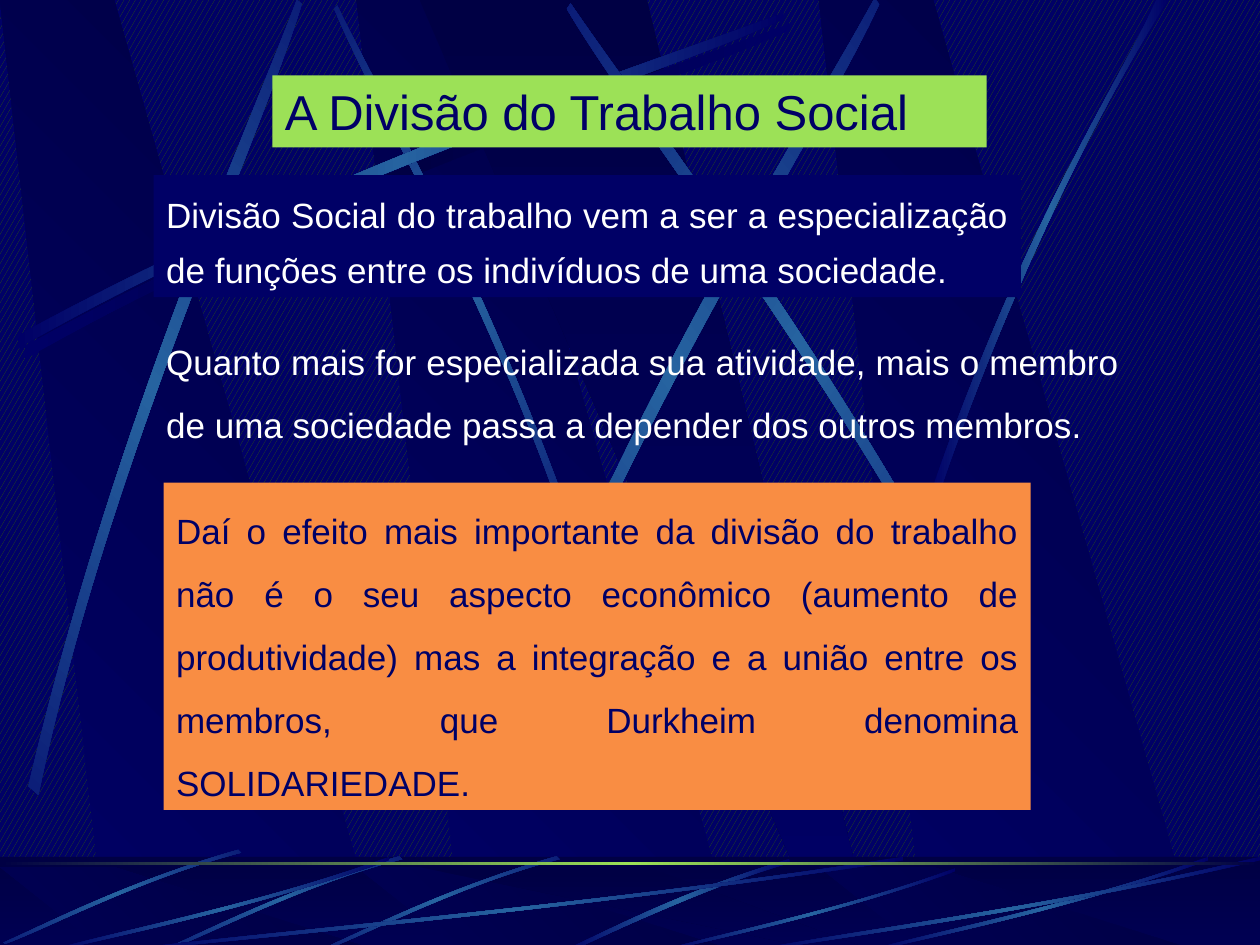
from dataclasses import dataclass

import pptx
import pptx.dml.color
import pptx.enum.dml
import pptx.enum.shapes
import pptx.enum.text
import pptx.oxml
import pptx.oxml.ns
import pptx.util
from pptx.util import Cm

NAVY, NIGHT, BEAM, LIME, ORANGE, WHITE = "000066", "000044", "2663A0", "9CE157", "F98D43", "FFFFFF"
ALIGN = pptx.enum.text.PP_ALIGN
GLOW = (NAVY, BEAM, NAVY)
SHADE = (NAVY, NIGHT, NAVY)

# Outlines as fractions of their box; a ribbon is two cubic curves of four points
STREAK = ((0, .96), (.43, .43), (.83, .15), (1, 0), (1, .02), (.84, .19), (.38, .5), (0, 1))
CLIPPED_STREAK = ((0, .99), (.4, .44), (.79, .17), (.95, 0), (1, 0), (.52, .36), (.16, .81), (.03, 1))
SHORT_STREAK = ((.99, 0), (.49, .37), (.16, .82), (0, .99), (.03, 1), (.23, .77), (.68, .25), (1, .04))
LEANING_BAND = ((.28, 1), (1, 1), (.3, 0), (0, 0))
WEDGE = ((0, 0), (.9, 1), (1, 1), (.5, 0))


@dataclass
class Box:
    """Place in centimetres."""
    left: float
    top: float
    width: float
    height: float

    def emu(self) -> list[int]:
        return [Cm(v) for v in (self.left, self.top, self.width, self.height)]


@dataclass
class Ribbon:
    box: Box
    turn: float = 0
    flip_x: bool = False
    flip_y: bool = False
    colors: tuple = GLOW
    outline: tuple = STREAK


@dataclass
class Panel:
    box: Box
    text: str
    fill: str | None
    color: str
    spacing: float


UPPER_RIBBONS = [
    Ribbon(Box(.51, .46, 15.44, 6.78), colors=SHADE),
    Ribbon(Box(3.58, 3.43, 11.23, 4.45), 45, flip_x=True),
    Ribbon(Box(.36, .25, 15.44, 6.78)),
    Ribbon(Box(-4.34, 4.62, 15.44, 6.78), 311.7),
    Ribbon(Box(5.87, 4.06, 15.85, 7.65), 321.6),
    Ribbon(Box(8.2, 3.86, 15.44, 6.78), 34.7, flip_x=True),
    Ribbon(Box(18.75, 0, 4.8, 10.08), outline=CLIPPED_STREAK),
]
FOOTER_RIBBONS = [Ribbon(Box(11.38, 17.32, 4.57, 1.85), outline=SHORT_STREAK)]
FOOTER_RIBBONS += [Ribbon(Box(left, top, 4.67, 2.11), 315, flip_x=True)
                   for left, top in ((6.55, 17.17), (3.38, 17.17), (.13, 17.04))]
FOOTER_RIBBONS += [Ribbon(Box(left, top, width, 19.18 - top), flip_x=True, flip_y=True)
                   for left, top, width in ((2.54, 17.27, 15.67), (1.07, 17.27, 6.78),
                                            (13.39, 17.5, 5.87), (17.58, 17.27, 6.78),
                                            (15.24, 17.27, 10.16))]

PANELS = [
    Panel(Box(3.3, 9.73, 17.48, 6.6),
          "Daí o efeito mais importante da divisão do trabalho não é o seu aspecto econômico "
          "(aumento de produtividade) mas a integração e a união entre os membros, que "
          "Durkheim denomina SOLIDARIEDADE.", ORANGE, NAVY, 1.5),
    Panel(Box(3.1, 6.32, 19.71, 2.79),
          "Quanto mais for especializada sua atividade, mais o membro de uma sociedade passa a "
          "depender dos outros membros.", None, WHITE, 1.5),
    Panel(Box(3.1, 3.53, 17.48, 2.46),
          "Divisão Social do trabalho vem a ser a especialização de funções entre os indivíduos "
          "de uma sociedade.", NAVY, WHITE, 1.3),
]


def rgb(color: str) -> pptx.dml.color.RGBColor:
    return pptx.dml.color.RGBColor.from_string(color)


def paint_solid(shape, color: str) -> None:
    shape.fill.solid()
    shape.fill.fore_color.rgb = rgb(color)


def paint_gradient(shape, colors: tuple, angle: int) -> None:
    """Spread the colours evenly, with the angle clockwise in degrees."""
    shape.fill.gradient()
    gradient = shape._element.spPr.find(pptx.oxml.ns.qn("a:gradFill"))
    stops = gradient.find(pptx.oxml.ns.qn("a:gsLst"))
    for stop in list(stops):
        stops.remove(stop)
    for i, color in enumerate(colors):
        stops.append(pptx.oxml.parse_xml(
            f'<a:gs {pptx.oxml.ns.nsdecls("a")} pos="{100000 * i // (len(colors) - 1)}">'
            f'<a:srgbClr val="{color}"/></a:gs>'))
    direction = gradient.find(pptx.oxml.ns.qn("a:lin"))
    direction.set("ang", str(angle * 60000))
    direction.set("scaled", "0")


def strip(shape):
    shape.line.fill.background()
    shape.shadow.inherit = False
    return shape


def add_rect(slide, box: Box):
    return strip(slide.shapes.add_shape(pptx.enum.shapes.MSO_SHAPE.RECTANGLE, *box.emu()))


def add_outline(slide, box: Box, points: list):
    left, top, width, height = box.emu()
    spots = [(round(left + x * width), round(top + y * height)) for x, y in points]
    builder = slide.shapes.build_freeform(*spots[0])
    builder.add_line_segments(spots[1:], close=True)
    return strip(builder.convert_to_shape())


def bend(segments: list) -> None:
    """Turn three line segments into one cubic curve."""
    bezier = pptx.oxml.parse_xml(f'<a:cubicBezTo {pptx.oxml.ns.nsdecls("a")}/>')
    segments[0].addprevious(bezier)
    for segment in segments:
        bezier.append(segment[0])
        segment.getparent().remove(segment)


def add_ribbon(slide, ribbon: Ribbon) -> None:
    points = [(1 - x if ribbon.flip_x else x, 1 - y if ribbon.flip_y else y)
              for x, y in ribbon.outline]
    shape = add_outline(slide, ribbon.box, points)
    segments = shape._element.spPr.findall(".//" + pptx.oxml.ns.qn("a:lnTo"))
    bend(segments[:3])
    bend(segments[4:7])
    shape.rotation = ribbon.turn
    paint_gradient(shape, ribbon.colors, 0)


def add_bands(slide, top: float, height: float) -> None:
    for left in (7.19, 0, 16.51):
        paint_gradient(add_outline(slide, Box(left, top, 7.67, height), LEANING_BAND),
                       (NAVY, NIGHT), 315)
    paint_gradient(add_outline(slide, Box(8.46, top, 9.17, height), WEDGE), (NIGHT, NAVY), 90)


def write(shape, text: str, size: int, color: str, align, spacing: float = 1) -> None:
    frame = shape.text_frame
    frame_format = {"word_wrap": True, "auto_size": pptx.enum.text.MSO_AUTO_SIZE.NONE,
                    "vertical_anchor": pptx.enum.text.MSO_ANCHOR.TOP}
    for name, value in frame_format.items():
        setattr(frame, name, value)
    frame.text = text
    paragraph = frame.paragraphs[0]
    for name, value in {"alignment": align, "line_spacing": spacing}.items():
        setattr(paragraph, name, value)
    font = paragraph.runs[0].font
    for name, value in {"name": "Arial", "size": pptx.util.Pt(size)}.items():
        setattr(font, name, value)
    font.color.rgb = rgb(color)


def add_decoration(slide) -> None:
    add_bands(slide, 0, 19.1)
    for ribbon in UPPER_RIBBONS:
        add_ribbon(slide, ribbon)

    footer = Box(0, 17.27, 25.4, 1.91)
    paint_gradient(add_rect(slide, footer), (NIGHT, NAVY), 90)
    add_bands(slide, 17.48, 1.7)
    veil = add_rect(slide, footer)
    paint_solid(veil, NIGHT)
    tint = veil._element.spPr.find(".//" + pptx.oxml.ns.qn("a:srgbClr"))
    tint.append(pptx.oxml.parse_xml(f'<a:alpha {pptx.oxml.ns.nsdecls("a")} val="50000"/>'))
    for ribbon in FOOTER_RIBBONS:
        add_ribbon(slide, ribbon)
    paint_gradient(add_rect(slide, Box(0, 17.37, 25.4, .06)), (NIGHT, LIME, NIGHT), 0)


def dress_master(slide) -> None:
    """Give the master its background and move the decoration behind its placeholders."""
    master = slide.slide_layout.slide_master
    fill = master.background.fill
    fill.patterned()
    fill.pattern = pptx.enum.dml.MSO_PATTERN.LARGE_CONFETTI
    fill.fore_color.rgb = rgb("2D5513")
    fill.back_color.rgb = rgb(NAVY)

    add_decoration(slide)
    first_placeholder = master.placeholders[0]._element
    for shape in list(slide.shapes):
        if not shape.is_placeholder:
            first_placeholder.addprevious(shape._element)


def add_panel(slide, panel: Panel) -> None:
    if panel.fill:
        shape = add_rect(slide, panel.box)
        paint_solid(shape, panel.fill)
    else:
        shape = slide.shapes.add_textbox(*panel.box.emu())
    write(shape, panel.text, 20, panel.color, ALIGN.JUSTIFY, panel.spacing)


def place_title(slide) -> None:
    title = slide.shapes.title
    title.left, title.top, title.width, title.height = Box(5.49, 1.52, 14.4, 1.45).emu()
    paint_solid(title, LIME)
    write(title, "A Divisão do Trabalho Social", 28, NAVY, ALIGN.LEFT)
    slide.shapes._spTree.append(title._element)


def main() -> None:
    deck = pptx.Presentation()
    deck.slide_width, deck.slide_height = Cm(25.4), Cm(19.05)
    slide = deck.slides.add_slide(deck.slide_layouts[5])
    dress_master(slide)
    for panel in PANELS:
        add_panel(slide, panel)
    place_title(slide)
    deck.save("out.pptx")


if __name__ == "__main__":
    main()
